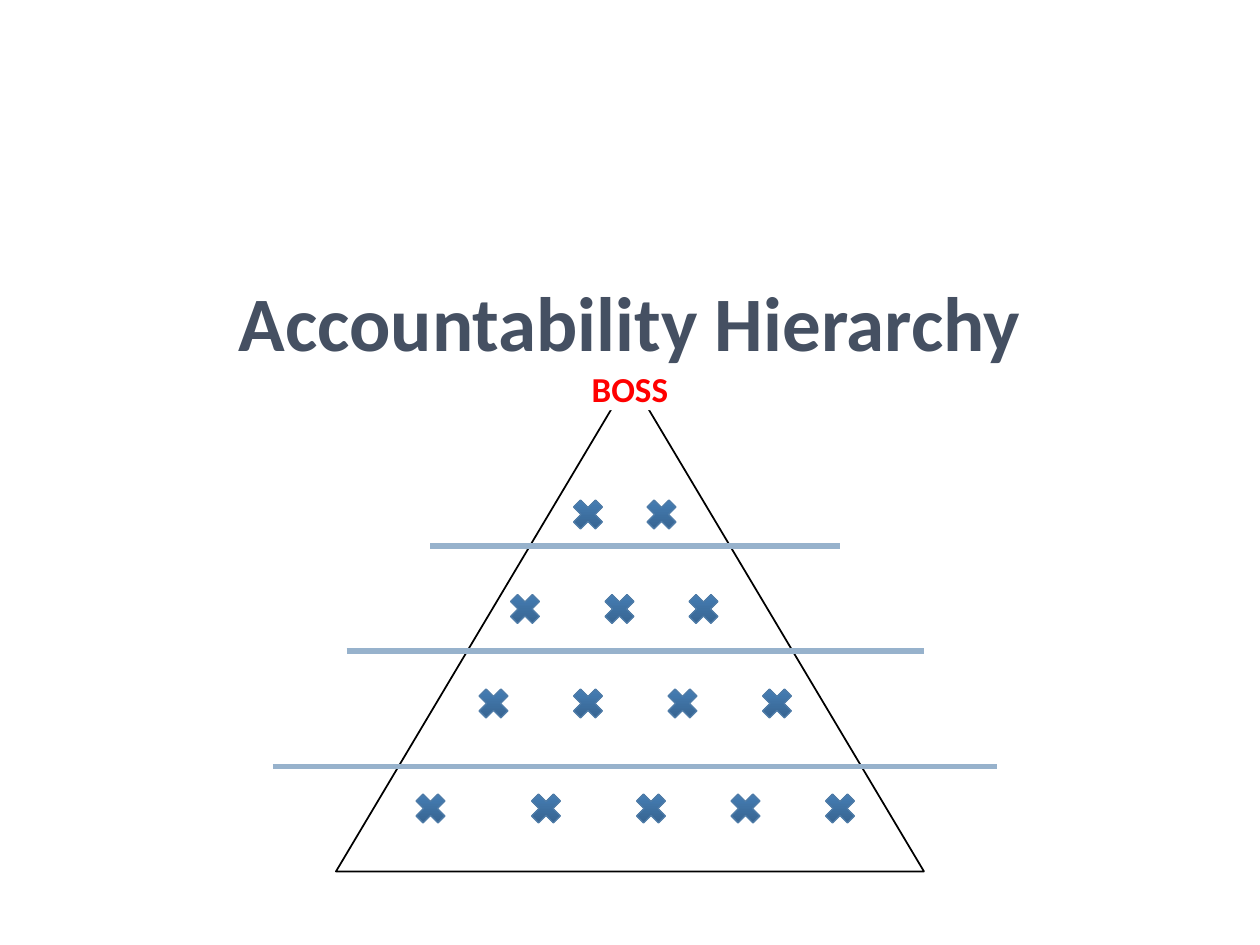
from copy import deepcopy
from typing import NamedTuple

from pptx import Presentation
from pptx.dml.color import RGBColor
from pptx.enum.shapes import MSO_CONNECTOR, MSO_SHAPE
from pptx.enum.text import MSO_ANCHOR, PP_ALIGN
from pptx.oxml.ns import qn
from pptx.oxml.xmlchemy import OxmlElement
from pptx.util import Inches, Pt

# Grid of 120 columns by 90 rows, twelve to the inch
COLUMNS, ROWS = 120, 90
MARK_SIZE = 4
MARK_GRADIENT = [(0, "345F89"), (0.8, "447BB1"), (1, "427CB4")]


class Box(NamedTuple):
    column: float
    row: float
    width: float
    height: float


class Level(NamedTuple):
    row: float
    mark_columns: tuple[int, ...]


class Divider(NamedTuple):
    row: float
    start: float
    end: float


LEVELS = [
    Level(47, (54, 61)),
    Level(56, (48, 57, 65)),
    Level(65, (45, 54, 63, 72)),
    Level(75, (39, 50, 60, 69, 78)),
]
DIVIDERS = [Divider(52, 41, 80), Divider(62, 33, 88), Divider(73, 26, 95)]


def grid(cells: float):
    return Inches(cells / 12)


def color(value: str) -> RGBColor:
    return RGBColor.from_string(value)


def apply(target, values: dict) -> None:
    for name, value in values.items():
        setattr(target, name, value)


def add_shape(slide, kind, box: Box):
    shape = slide.shapes.add_shape(kind, *map(grid, box))
    shape.shadow.inherit = False
    return shape


def write_text(shape, text: str, size: int, text_color: str, frame_format: dict) -> None:
    apply(shape.text_frame, {"word_wrap": True, **frame_format})
    paragraph = shape.text_frame.paragraphs[0]
    paragraph.alignment = PP_ALIGN.CENTER
    run = paragraph.add_run()
    run.text = text
    apply(run.font, {"name": "Calibri", "size": Pt(size), "bold": True})
    run.font.color.rgb = color(text_color)


def add_mark(slide, column: float, row: float) -> None:
    mark = add_shape(slide, MSO_SHAPE.MATH_MULTIPLY, Box(column, row, MARK_SIZE, MARK_SIZE))
    mark.fill.gradient()
    mark.fill.gradient_angle = 90
    # The default gradient has two stops; a third is needed
    stop_list = mark.fill._xPr.find(qn("a:gradFill")).find(qn("a:gsLst"))
    stop_list.append(deepcopy(stop_list[-1]))
    for stop, (position, stop_color) in zip(mark.fill.gradient_stops, MARK_GRADIENT):
        stop.position = position
        stop.color.rgb = color(stop_color)
    mark.line.color.rgb = color("4F7CA8")
    mark.line.width = Pt(0)


def add_divider(slide, divider: Divider) -> None:
    row = grid(divider.row)
    line = slide.shapes.add_connector(
        MSO_CONNECTOR.STRAIGHT, grid(divider.start), row, grid(divider.end), row)
    line.line.color.rgb = color("97B2CC")
    line.line.width = Pt(3)
    line._element.spPr.append(OxmlElement("a:effectLst"))


def main() -> None:
    presentation = Presentation()
    apply(presentation, {"slide_width": grid(COLUMNS), "slide_height": grid(ROWS)})
    slide = presentation.slides.add_slide(presentation.slide_layouts[6])

    # Title
    title = slide.shapes.add_textbox(*map(grid, Box(6, 28, 108, 5)))
    write_text(title, "Accountability Hierarchy", 44, "455062",
               {"vertical_anchor": MSO_ANCHOR.MIDDLE})

    # Pyramid outline
    pyramid = add_shape(slide, MSO_SHAPE.ISOSCELES_TRIANGLE, Box(32, 36, 56, 47))
    pyramid.fill.background()
    pyramid.line.color.rgb = color("000000")
    pyramid.line.width = Pt(1)

    # Label covering the tip of the pyramid
    boss = add_shape(slide, MSO_SHAPE.RECTANGLE, Box(29, 35, 62, 4.08))
    boss.fill.solid()
    boss.fill.fore_color.rgb = color("FFFFFF")
    boss.line.fill.background()
    margins = {f"margin_{side}": 0 for side in ("left", "top", "right", "bottom")}
    write_text(boss, "BOSS", 20, "FF0000", {"vertical_anchor": MSO_ANCHOR.TOP, **margins})

    # People on each level, then the lines between levels
    for level in LEVELS:
        for column in level.mark_columns:
            add_mark(slide, column, level.row)
    for divider in DIVIDERS:
        add_divider(slide, divider)

    presentation.save("out.pptx")


if __name__ == "__main__":
    main()
